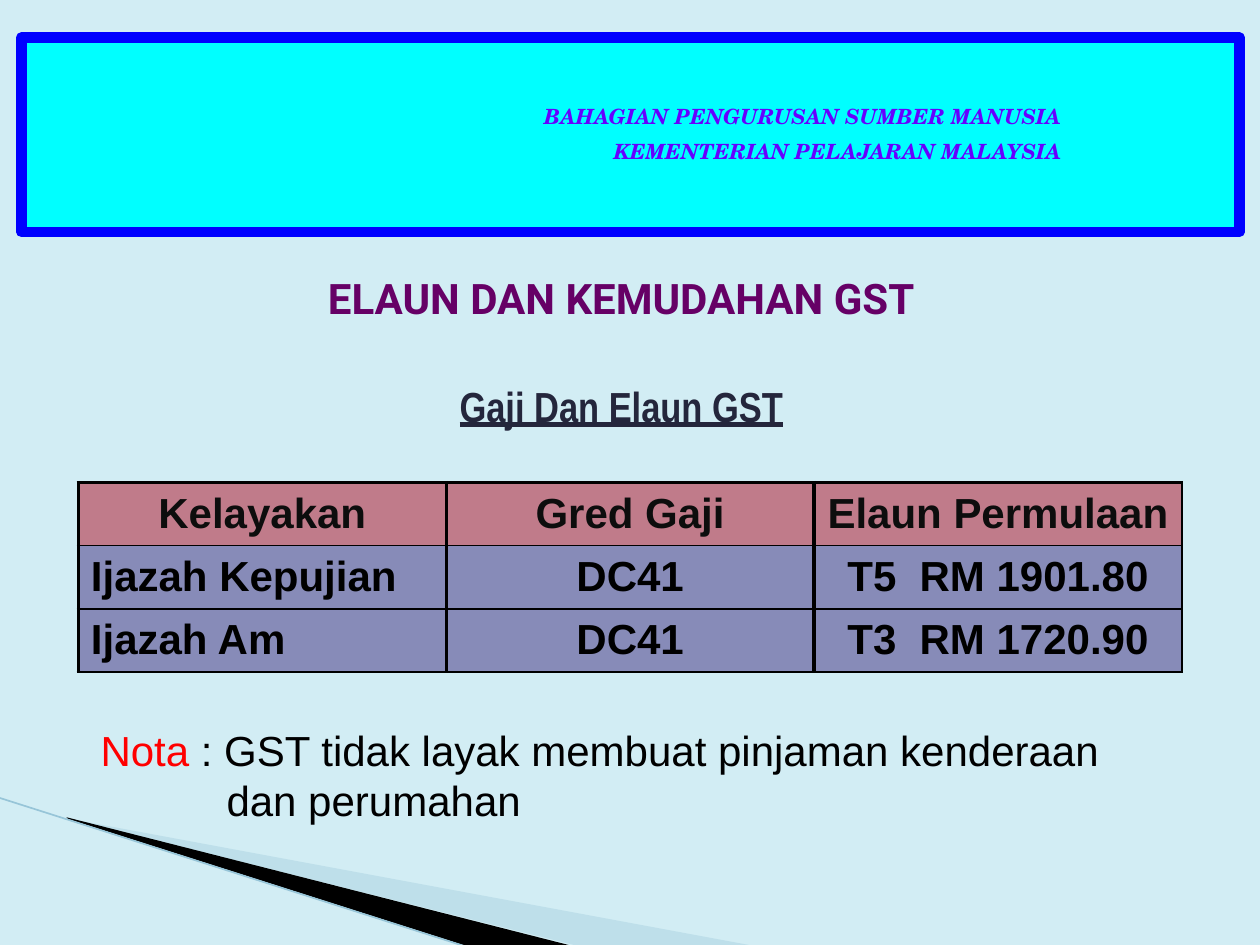
from typing import NamedTuple

from lxml.etree import SubElement
from pptx import Presentation
from pptx.dml.color import RGBColor
from pptx.enum.shapes import MSO_CONNECTOR, MSO_SHAPE
from pptx.enum.text import MSO_ANCHOR, MSO_AUTO_SIZE as AutoSize, PP_ALIGN as Align
from pptx.oxml import parse_xml
from pptx.oxml.ns import nsdecls, qn
from pptx.util import Pt

BACKGROUND = RGBColor(0xD2, 0xED, 0xF4)
PALE_WEDGE = RGBColor(0xA0, 0xCB, 0xDC)
EDGE_LINE = RGBColor(0x97, 0xC5, 0xD8)
CYAN = RGBColor(0x00, 0xFF, 0xFF)
BLUE = RGBColor(0x00, 0x00, 0xFF)
VIOLET = RGBColor(0x66, 0x00, 0xFF)
PURPLE = RGBColor(0x66, 0x00, 0x66)
NAVY = RGBColor(0x24, 0x26, 0x3C)
HEADER_FILL = RGBColor(0xC0, 0x7B, 0x8A)
HEADER_TEXT = RGBColor(0x0D, 0x0D, 0x0D)
BODY_FILL = RGBColor(0x87, 0x8B, 0xB8)
RED = RGBColor(0xFF, 0x00, 0x00)
BLACK = RGBColor(0x00, 0x00, 0x00)


class Box(NamedTuple):
    left: float
    top: float
    width: float
    height: float

    def lengths(self):
        return [Pt(value) for value in self]


class Wedge(NamedTuple):
    points: list
    color: RGBColor
    opacity: int


WEDGES = [
    Wedge([(39.6, 468.5), (428.4, 540.5), (328.3, 540.5), (39.6, 468)], PALE_WEDGE, 40),
    Wedge([(38.2, 467.3), (329, 540.7), (267.8, 541.4), (38.9, 468)], BLACK, 100),
]
ROWS = [
    ("Kelayakan", "Gred Gaji", "Elaun Permulaan"),
    ("Ijazah Kepujian", "DC41", "T5  RM 1901.80"),
    ("Ijazah Am", "DC41", "T3  RM 1720.90"),
]
COLUMN_WIDTH = 210.2
ROW_HEIGHT = 36
THICK, THIN = 2.25, 1


def write(paragraph, text, *, font="Arial", size=24, color=BLACK, bold=False,
          italic=False, underline=False, align=Align.LEFT):
    paragraph.alignment = align
    run = paragraph.add_run()
    run.text = text
    run.font.name = font
    run.font.size = Pt(size)
    run.font.color.rgb = color
    run.font.bold = bold
    run.font.italic = italic
    run.font.underline = underline


def add_text_frame(slide, box: Box):
    frame = slide.shapes.add_textbox(*box.lengths()).text_frame
    frame.word_wrap = True
    frame.auto_size = AutoSize.SHAPE_TO_FIT_TEXT
    return frame


def draw_wedge(slide, wedge: Wedge) -> None:
    builder = slide.shapes.build_freeform(*wedge.points[0], scale=Pt(1))
    builder.add_line_segments(wedge.points[1:], close=True)
    shape = builder.convert_to_shape()
    shape.shadow.inherit = False
    shape.line.fill.background()
    shape.fill.solid()
    shape.fill.fore_color.rgb = wedge.color
    if wedge.opacity < 100:
        color = shape.fill._xPr.find(".//" + qn("a:srgbClr"))
        SubElement(color, qn("a:alpha"), val=str(wedge.opacity * 1000))


def draw_background(slide) -> None:
    slide.background.fill.solid()
    slide.background.fill.fore_color.rgb = BACKGROUND
    for wedge in WEDGES:
        draw_wedge(slide, wedge)
    line = slide.shapes.add_connector(
        MSO_CONNECTOR.STRAIGHT, Pt(-0.7), Pt(455.8), Pt(267.8), Pt(541.4))
    line.line.color.rgb = EDGE_LINE
    line.line.width = Pt(0.95)
    SubElement(line._element.spPr, qn("a:effectLst"))


def draw_banner(slide) -> None:
    banner = slide.shapes.add_shape(
        MSO_SHAPE.RECTANGLE, *Box(12.2, 21.6, 696.2, 110.9).lengths())
    banner.shadow.inherit = False
    banner.fill.solid()
    banner.fill.fore_color.rgb = CYAN
    banner.line.color.rgb = BLUE
    banner.line.width = Pt(6)
    frame = add_text_frame(slide, Box(254.2, 55.4, 362.9, 44.6))
    style = dict(font="TeX Gyre Schola", size=12, color=VIOLET, bold=True,
                 italic=True, align=Align.RIGHT)
    write(frame.paragraphs[0], "BAHAGIAN PENGURUSAN SUMBER MANUSIA ", **style)
    ministry = frame.add_paragraph()
    ministry.space_before = Pt(6)
    write(ministry, "KEMENTERIAN PELAJARAN MALAYSIA ", **style)


def draw_headings(slide) -> None:
    title = slide.shapes.title
    title.left, title.top, title.width, title.height = Box(28.1, 151.9, 653.8, 36.7).lengths()
    frame = title.text_frame
    frame.word_wrap = True
    frame.auto_size = AutoSize.NONE
    frame.vertical_anchor = MSO_ANCHOR.TOP
    write(frame.paragraphs[0], "ELAUN DAN KEMUDAHAN GST", font="Roboto",
          color=PURPLE, bold=True, align=Align.CENTER)
    subtitle = add_text_frame(slide, Box(28.1, 213.8, 653.8, 36.7))
    write(subtitle.paragraphs[0], "Gaji Dan Elaun GST", font="Arial Narrow",
          color=NAVY, bold=True, underline=True, align=Align.CENTER)


def set_borders(cell, **widths: float) -> None:
    properties = cell._tc.get_or_add_tcPr()
    for position, (side, width) in enumerate(widths.items()):
        properties.insert(position, parse_xml(
            f'<a:ln{side} {nsdecls("a")} w="{Pt(width)}"><a:solidFill>'
            f'<a:srgbClr val="{BLACK}"/></a:solidFill></a:ln{side}>'))


def draw_table(slide) -> None:
    columns = len(ROWS[0])
    box = Box(44.8, 275.8, COLUMN_WIDTH * columns, ROW_HEIGHT * len(ROWS))
    table = slide.shapes.add_table(len(ROWS), columns, *box.lengths()).table
    for column in table.columns:
        column.width = Pt(COLUMN_WIDTH)
    for row_index, texts in enumerate(ROWS):
        table.rows[row_index].height = Pt(ROW_HEIGHT)
        header = row_index == 0
        for column_index, text in enumerate(texts):
            cell = table.cell(row_index, column_index)
            cell.vertical_anchor = MSO_ANCHOR.MIDDLE
            cell.fill.solid()
            cell.fill.fore_color.rgb = HEADER_FILL if header else BODY_FILL
            set_borders(cell, L=THICK, R=THIN if column_index == columns - 1 else THICK,
                        T=THICK if header else THIN, B=THIN)
            write(cell.text_frame.paragraphs[0], text, bold=True,
                  color=HEADER_TEXT if header else BLACK,
                  align=Align.CENTER if header or column_index else Align.LEFT)


def draw_note(slide) -> None:
    paragraph = add_text_frame(slide, Box(50.4, 410.4, 624.2, 65.5)).paragraphs[0]
    properties = paragraph._p.get_or_add_pPr()
    properties.set("marL", str(Pt(72)))
    properties.set("indent", str(Pt(-72)))
    write(paragraph, "Nota", color=RED)
    write(paragraph, " : GST tidak layak membuat pinjaman kenderaan dan perumahan")


def main() -> None:
    presentation = Presentation()
    presentation.slide_width, presentation.slide_height = Pt(720), Pt(540)
    slide = presentation.slides.add_slide(presentation.slide_layouts[5])
    draw_background(slide)
    draw_banner(slide)
    draw_headings(slide)
    draw_table(slide)
    draw_note(slide)
    presentation.save("out.pptx")


if __name__ == "__main__":
    main()
